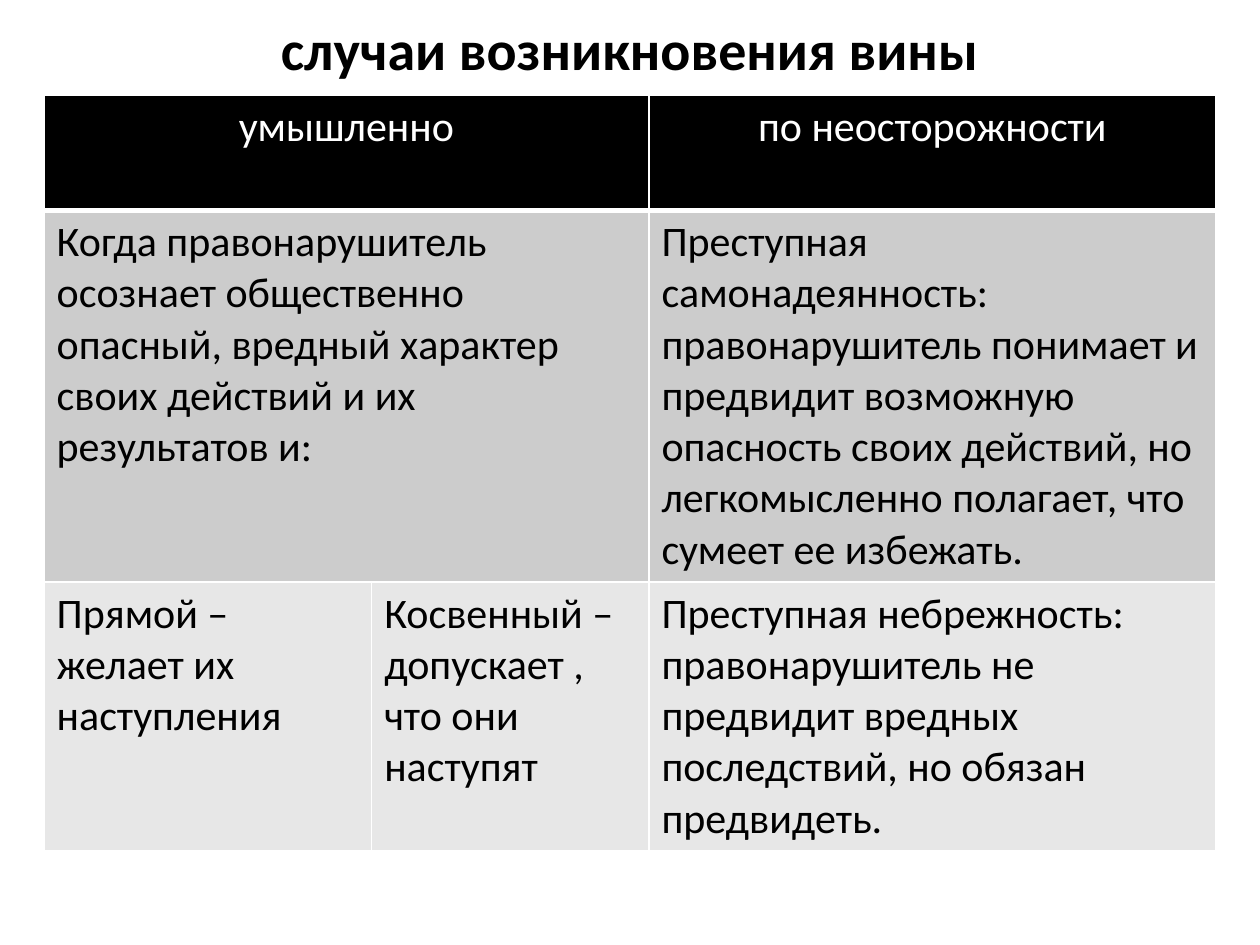
import dataclasses

import lxml.etree
import pptx
import pptx.dml.color
import pptx.enum.text
import pptx.oxml.ns
import pptx.util

ALIGN = pptx.enum.text.PP_ALIGN


@dataclasses.dataclass(frozen=True)
class Theme:
    font: str = "Calibri"
    title_size: int = 32
    body_size: int = 24
    dark: str = "000000"
    light: str = "FFFFFF"
    row_fills: tuple = ("000000", "CCCCCC", "E7E7E7")
    border_width: int = 1
    header_border_width: int = 3


class SlideBuilder:
    def __init__(self, presentation, theme):
        self.width = presentation.slide_width
        self.height = presentation.slide_height
        self.theme = theme
        self.slide = presentation.slides.add_slide(presentation.slide_layouts[6])

    def place(self, left, top, width, height):
        return (round(left * self.width), round(top * self.height),
                round(width * self.width), round(height * self.height))

    def add_text(self, text_frame, text, size, color, alignment, bold=False):
        paragraph = text_frame.paragraphs[0]
        paragraph.alignment = alignment
        run = paragraph.add_run()
        run.text = text
        font_format = {"name": self.theme.font, "size": pptx.util.Pt(size), "bold": bold}
        for attribute, value in font_format.items():
            setattr(run.font, attribute, value)
        run.font.color.rgb = pptx.dml.color.RGBColor.from_string(color)

    def title(self, text, left, top, width, height):
        shape = self.slide.shapes.add_textbox(*self.place(left, top, width, height))
        frame_format = {"word_wrap": True, "vertical_anchor": pptx.enum.text.MSO_ANCHOR.MIDDLE}
        for attribute, value in frame_format.items():
            setattr(shape.text_frame, attribute, value)
        self.add_text(shape.text_frame, text, self.theme.title_size, self.theme.dark,
                      ALIGN.CENTER, bold=True)

    def border(self, cell, side, width):
        qualified = pptx.oxml.ns.qn
        properties = cell._tc.get_or_add_tcPr()
        line = lxml.etree.SubElement(properties, qualified(f"a:ln{side}"),
                                     w=str(pptx.util.Pt(width)))
        fill = lxml.etree.SubElement(line, qualified("a:solidFill"))
        lxml.etree.SubElement(fill, qualified("a:srgbClr"), val=self.theme.light)

    def style_cell(self, cell, row):
        for side in "LRTB":
            thick = row == 0 and side == "B"
            self.border(cell, side, self.theme.header_border_width if thick
                        else self.theme.border_width)
        cell.fill.solid()
        cell.fill.fore_color.rgb = pptx.dml.color.RGBColor.from_string(self.theme.row_fills[row])

    def table(self, rows, left, top, column_shares, row_shares):
        area = self.place(left, top, sum(column_shares), sum(row_shares))
        table = self.slide.shapes.add_table(len(rows), len(column_shares), *area).table
        for column, share in zip(table.columns, column_shares):
            column.width = round(share * self.width)
        for table_row, share in zip(table.rows, row_shares):
            table_row.height = round(share * self.height)
        for row, texts in enumerate(rows):
            header = row == 0
            for column, text in enumerate(texts):
                cell = table.cell(row, column)
                self.style_cell(cell, row)
                if text is None:
                    table.cell(row, column - 1).merge(cell)
                    continue
                self.add_text(cell.text_frame, text, self.theme.body_size,
                              self.theme.light if header else self.theme.dark,
                              ALIGN.CENTER if header else ALIGN.LEFT)


GUILT_FORMS = [
    ["умышленно", None, "по неосторожности"],
    ["Когда правонарушитель осознает общественно опасный, вредный характер "
     "своих действий и их результатов и:", None,
     "Преступная самонадеянность: правонарушитель понимает и предвидит возможную "
     "опасность своих действий, но легкомысленно полагает, что сумеет ее избежать."],
    ["Прямой – желает их наступления",
     "Косвенный – допускает , что они наступят",
     "Преступная небрежность: правонарушитель не предвидит вредных последствий, "
     "но обязан предвидеть."],
]


def main():
    presentation = pptx.Presentation()
    presentation.slide_width = pptx.util.Inches(10)
    presentation.slide_height = pptx.util.Inches(7.5)
    builder = SlideBuilder(presentation, Theme())
    builder.title("случаи возникновения вины", 0.05, 0, 0.9, 0.76 / 7.5)
    builder.table(GUILT_FORMS, 0.035, 0.76 / 7.5,
                  column_shares=(0.26, 0.22, 0.45),
                  row_shares=(0.91 / 7.5, 2.95 / 7.5, 2.13 / 7.5))
    presentation.save("out.pptx")


if __name__ == "__main__":
    main()
